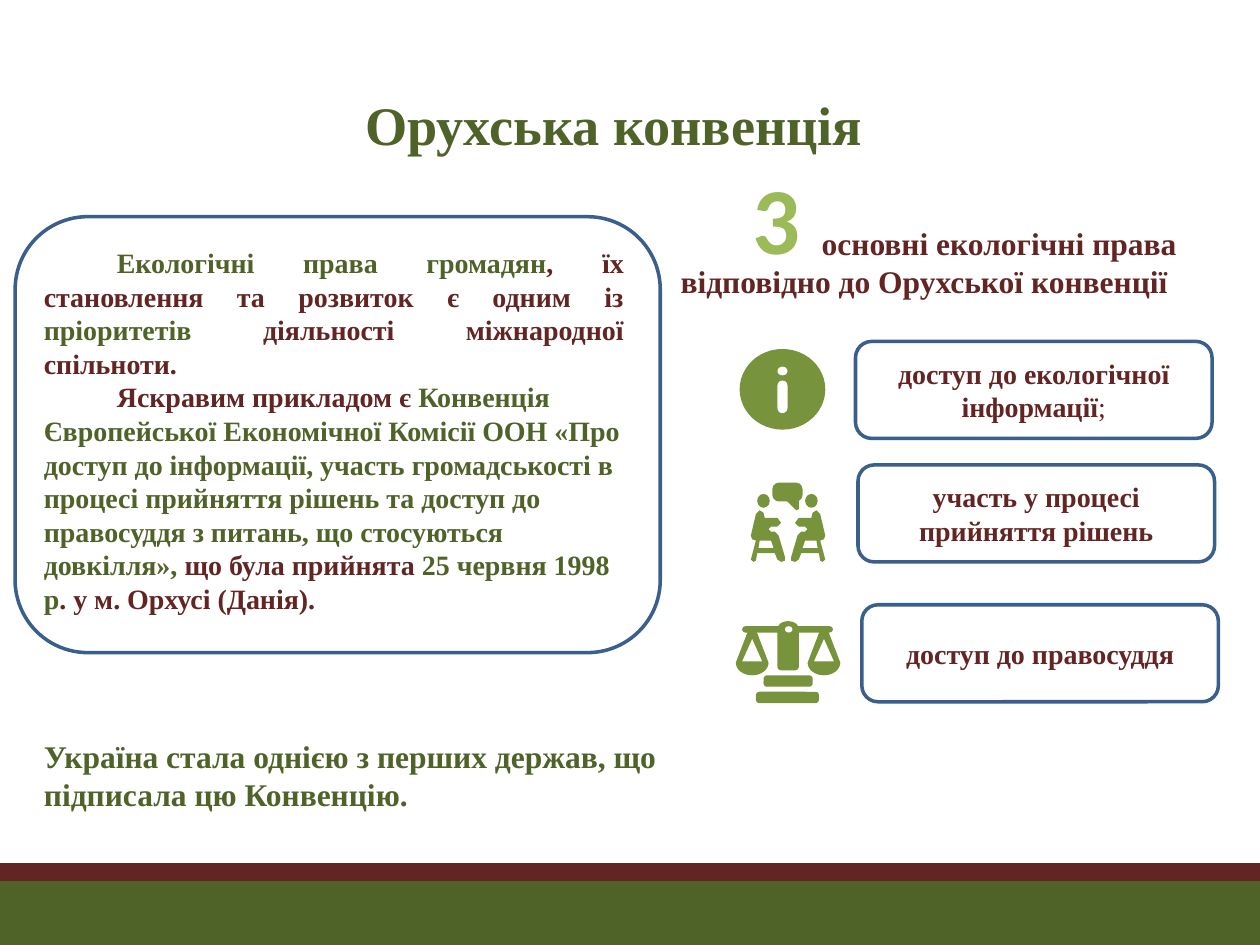
from math import cos, pi, sin

from pptx import Presentation
from pptx.dml.color import RGBColor
from pptx.enum.shapes import MSO_SHAPE
from pptx.enum.text import MSO_ANCHOR, PP_ALIGN
from pptx.util import Inches, Pt

COLORS = {
    "green": "4F6228",
    "maroon": "632523",
    "icon": "77933C",
    "number": "9BBB59",
    "border": "3A5F8C",
    "white": "FFFFFF",
}


class SlideBuilder:
    font = "Times New Roman"

    def __init__(self, slide):
        self.slide = slide

    def color(self, name):
        return RGBColor.from_string(COLORS[name])

    def paint(self, shape, fill=None, line=None):
        shape.shadow.inherit = False
        if fill:
            shape.fill.solid()
            shape.fill.fore_color.rgb = self.color(fill)
        else:
            shape.fill.background()
        if line:
            shape.line.color.rgb = self.color(line)
            shape.line.width = Pt(2)
        else:
            shape.line.fill.background()

    def shape(self, kind, box, fill=None, line=None):
        shape = self.slide.shapes.add_shape(kind, *map(Inches, box))
        self.paint(shape, fill, line)
        return shape

    def rounded(self, box, fill=None, line=None):
        return self.shape(MSO_SHAPE.ROUNDED_RECTANGLE, box, fill, line)

    def oval(self, box, fill):
        return self.shape(MSO_SHAPE.OVAL, box, fill)

    def outline(self, *contours, fill="icon"):
        contours = [[(Inches(x), Inches(y)) for x, y in c] for c in contours]
        builder = self.slide.shapes.build_freeform(*contours[0][0])
        builder.add_line_segments(contours[0][1:])
        for hole in contours[1:]:
            builder.move_to(*hole[0])
            builder.add_line_segments(hole[1:])
        self.paint(builder.convert_to_shape(), fill)

    def fill_paragraph(self, paragraph, parts, size, align=PP_ALIGN.LEFT, indent=0, font=None):
        paragraph.text = parts[0][0]
        for words, *_ in parts[1:]:
            paragraph.add_run().text = words
        paragraph.alignment = align
        if indent:
            properties = paragraph._p.get_or_add_pPr()
            properties.set("marL", "0")
            properties.set("indent", str(Inches(indent)))
        for run, (_, color, *weight) in zip(paragraph.runs, parts):
            run.font.name = font or self.font
            run.font.size = Pt(size)
            run.font.bold = weight[0] if weight else True
            run.font.color.rgb = self.color(color)

    def text(self, box, wrap=True):
        frame = self.slide.shapes.add_textbox(*map(Inches, box)).text_frame
        frame.word_wrap = wrap
        return frame

    def card(self, box, parts):
        frame = self.rounded(box, line="border").text_frame
        frame.word_wrap = True
        frame.vertical_anchor = MSO_ANCHOR.MIDDLE
        self.fill_paragraph(frame.paragraphs[0], parts, 16, PP_ALIGN.CENTER)

    def info_icon(self):
        self.oval((5.87, 2.77, 0.68, 0.64), "icon")
        self.oval((6.17, 2.91, 0.08, 0.07), "white")
        stem = self.rounded((6.17, 3.02, 0.08, 0.26), "white")
        stem.adjustments[0] = 0.5

    def meeting_icon(self):
        sitter = [
            (6.03, 4.05), (6, 4.08), (5.96, 4.25), (5.97, 4.28), (6, 4.29),
            (5.96, 4.44), (5.98, 4.46), (6, 4.45), (6.01, 4.39), (6.15, 4.39),
            (6.17, 4.44), (6.2, 4.46), (6.23, 4.45), (6.23, 4.42), (6.18, 4.25),
            (6.15, 4.22), (6.12, 4.22), (6.1, 4.2), (6.12, 4.18), (6.17, 4.18),
            (6.2, 4.15), (6.17, 4.11), (6.07, 4.11), (6.06, 4.07),
        ]
        chair_gap = [(6.03, 4.29), (6.12, 4.29), (6.14, 4.35), (6.02, 4.35)]
        self.outline(sitter, chair_gap)
        self.outline(*[[(12.51 - x, y) for x, y in c] for c in (sitter, chair_gap)])
        for head_left in (6.01, 6.39):
            self.oval((head_left, 3.92, 0.1, 0.11), "icon")
        bubble = self.rounded((6.13, 3.83, 0.24, 0.15), "icon")
        bubble.adjustments[0] = 0.35
        self.outline([(6.24, 3.97), (6.34, 3.97), (6.34, 4.04), (6.32, 4.05)])

    def scales_icon(self):
        for step in ((6, 5.49, 0.5, 0.09), (6.06, 5.36, 0.39, 0.09)):
            self.rounded(step, "icon").adjustments[0] = 0.3
        beam = self.rounded((5.89, 4.97, 0.72, 0.05), "icon")
        beam.adjustments[0] = 0.5
        self.rounded((6.17, 4.97, 0.17, 0.35), "icon")
        self.oval((6.17, 4.93, 0.17, 0.12), "icon")
        self.oval((6.23, 4.97, 0.06, 0.05), "white")
        for center in (5.97, 6.54):
            bowl = [
                (center - 0.13 * cos(pi * i / 16), 5.26 + 0.1 * sin(pi * i / 16))
                for i in range(17)
            ]
            pan = [(center - 0.03, 5), *bowl, (center + 0.03, 5)]
            gap = [(center, 5.07), (center + 0.08, 5.25), (center - 0.08, 5.25)]
            self.outline(pan, gap)


def main():
    deck = Presentation()
    deck.slide_width, deck.slide_height = Inches(10), Inches(7.5)
    page = SlideBuilder(deck.slides.add_slide(deck.slide_layouts[6]))

    title = page.text((0.28, 0.29, 9.29, 1.65))
    title.vertical_anchor = MSO_ANCHOR.MIDDLE
    title.margin_bottom, title.margin_right = Inches(0.32), Inches(0.21)
    page.fill_paragraph(title.paragraphs[0], [("Орухська конвенція", "green")], 31, PP_ALIGN.CENTER)

    page.shape(MSO_SHAPE.RECTANGLE, (0, 6.98, 10, 0.52), "green", "green")
    page.shape(MSO_SHAPE.RECTANGLE, (0, 6.86, 10, 0.12), "maroon", "maroon")

    page.rounded((0.12, 1.72, 5.12, 3.46), line="border")
    convention = page.text((0.25, 1.9, 4.8, 3.06))
    page.fill_paragraph(convention.paragraphs[0], [
        ("Екологічні права громадян", "green"),
        (", їх становлення та розвиток є одним із ", "maroon"),
        ("пріоритетів ", "green"),
        ("діяльності міжнародної спільноти.", "maroon"),
    ], 16, PP_ALIGN.JUSTIFY, 0.58)
    page.fill_paragraph(convention.add_paragraph(), [
        ("Яскравим прикладом є ", "maroon"),
        ("Конвенція Європейської Економічної Комісії ООН «Про доступ до інформації, "
         "участь громадськості в процесі прийняття рішень та доступ до правосуддя "
         "з питань, що стосуються довкілля», ", "green"),
        ("що була прийнята ", "maroon"),
        ("25 червня 1998 р", "green"),
        (". у м. Орхусі (Данія).", "maroon"),
    ], 16, indent=0.58)

    rights = page.text((5.02, 1.73, 4.63, 1.62))
    page.fill_paragraph(rights.paragraphs[0], [
        ("основні екологічні права відповідно до Орухської конвенції", "maroon"),
    ], 18, PP_ALIGN.CENTER, 1.19)
    count = page.text((5.87, 1.22, 0.59, 1.01), wrap=False)
    page.fill_paragraph(count.paragraphs[0], [("3", "number")], 54, PP_ALIGN.CENTER, font="Calibri")

    page.info_icon()
    page.meeting_icon()
    page.scales_icon()
    for left, top, parts in (
        (6.79, 2.71, [("доступ до екологічної інформації", "maroon"), (";", "maroon", False)]),
        (6.81, 3.69, [("участь у процесі прийняття рішень", "maroon")]),
        (6.84, 4.8, [("доступ до правосуддя", "maroon")]),
    ):
        page.card((left, top, 2.83, 0.77), parts)

    ukraine = page.text((0.25, 5.8, 5.85, 1.01))
    page.fill_paragraph(ukraine.paragraphs[0], [
        ("Україна стала однією з перших держав, що підписала цю Конвенцію.", "green"),
    ], 18)
    deck.save("out.pptx")


if __name__ == "__main__":
    main()
